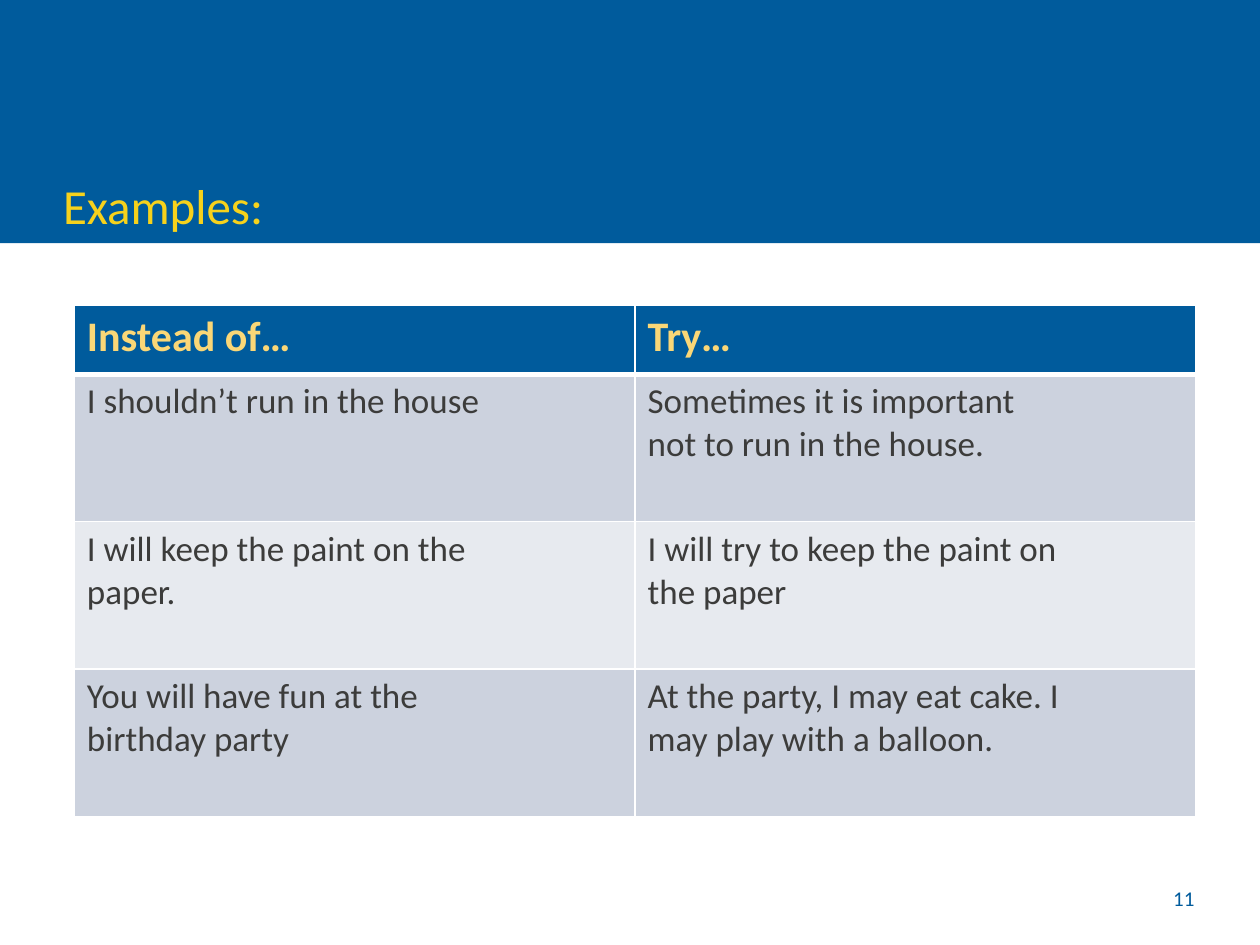
"""Build the slide that compares rigid sentences with gentler ones."""
from lxml import etree
from pptx import Presentation
from pptx.dml.color import RGBColor
from pptx.enum.shapes import MSO_SHAPE
from pptx.enum.text import MSO_ANCHOR, PP_ALIGN
from pptx.oxml.ns import qn
from pptx.util import Inches, Pt

RECTANGLE = MSO_SHAPE.RECTANGLE
TOP, MIDDLE = MSO_ANCHOR.TOP, MSO_ANCHOR.MIDDLE
LEFT, RIGHT = PP_ALIGN.LEFT, PP_ALIGN.RIGHT

TITLE = "Examples:"
PAGE_NUMBER = "11"
ROWS = [
    (["Instead of…"], ["Try…"]),
    (["I shouldn’t run in the house"],
     ["Sometimes it is important", "not to run in the house."]),
    (["I will keep the paint on the", "paper."],
     ["I will try to keep the paint on", "the paper"]),
    (["You will have fun at the", "birthday party"],
     ["At the party, I may eat cake. I", "may play with a balloon."]),
]
COLORS = {
    "blue": "005B9C", "yellow": "F6D21C", "gold": "FAD777", "ink": "3C3C3B",
    "dark band": "CCD2DE", "light band": "E7EAEF", "white": "FFFFFF",
}
FONT = "Calibri"
WIDTH, HEIGHT = 10, 7.5
BANNER_HEIGHT = 1.93
TABLE_LEFT, TABLE_TOP, COLUMN_WIDTH = 0.59, 2.42, 4.45
HEADER_HEIGHT, BODY_HEIGHT = 0.55, 1.17


def color(name):
    return RGBColor.from_string(COLORS[name])


def write(frame, lines, size, ink, bold=False, align=LEFT):
    for index, line in enumerate(lines):
        para = frame.paragraphs[0] if index == 0 else frame.add_paragraph()
        para.alignment = align
        span = para.add_run()
        span.text = line
        span.font.name, span.font.size, span.font.bold = FONT, Pt(size), bold
        span.font.color.rgb = color(ink)


def add_text(page, text, place, anchor=TOP, **style):
    frame = page.shapes.add_textbox(*map(Inches, place)).text_frame
    frame.word_wrap = True
    frame.vertical_anchor = anchor
    frame.margin_left = frame.margin_right = 0
    frame.margin_top = frame.margin_bottom = 0
    write(frame, [text], **style)


def add_borders(cell, **widths):
    properties = cell._tc.get_or_add_tcPr()
    for index, side in enumerate("LRTB"):
        line = etree.Element(qn(f"a:ln{side}"), w=str(Pt(widths.get(side, 1))))
        fill = etree.SubElement(line, qn("a:solidFill"))
        etree.SubElement(fill, qn("a:srgbClr"), val=COLORS["white"])
        properties.insert(index, line)


def add_banner(page):
    banner = page.shapes.add_shape(
        RECTANGLE, 0, 0, Inches(WIDTH), Inches(BANNER_HEIGHT))
    banner.shadow.inherit = False
    banner.fill.solid()
    banner.fill.fore_color.rgb = color("blue")
    banner.line.fill.background()


def add_examples(page):
    heights = [HEADER_HEIGHT] + [BODY_HEIGHT] * (len(ROWS) - 1)
    columns = len(ROWS[0])
    place = (TABLE_LEFT, TABLE_TOP, columns * COLUMN_WIDTH, sum(heights))
    table = page.shapes.add_table(
        len(ROWS), columns, *map(Inches, place)).table
    for column in table.columns:
        column.width = Inches(COLUMN_WIDTH)
    for index, (row, height) in enumerate(zip(ROWS, heights)):
        table.rows[index].height = Inches(height)
        if index == 0:
            band, edges = "blue", {"B": 3}
            style = {"size": 24, "ink": "gold", "bold": True}
        else:
            band = "dark band" if index % 2 else "light band"
            edges = {"T": 3} if index == 1 else {}
            style = {"size": 20, "ink": "ink"}
        for position, lines in enumerate(row):
            cell = table.cell(index, position)
            cell.fill.solid()
            cell.fill.fore_color.rgb = color(band)
            write(cell.text_frame, lines, **style)
            add_borders(cell, **edges)


def main():
    deck = Presentation()
    deck.slide_width, deck.slide_height = Inches(WIDTH), Inches(HEIGHT)
    page = deck.slides.add_slide(deck.slide_layouts[6])
    add_banner(page)
    add_text(page, TITLE, (0.5, 1.33, 8.79, 0.59), anchor=MIDDLE,
             size=28, ink="yellow")
    add_text(page, PAGE_NUMBER, (7.15, 7.03, 2.33, 0.32),
             size=12, ink="blue", align=RIGHT)
    add_examples(page)
    deck.save("out.pptx")


if __name__ == "__main__":
    main()
